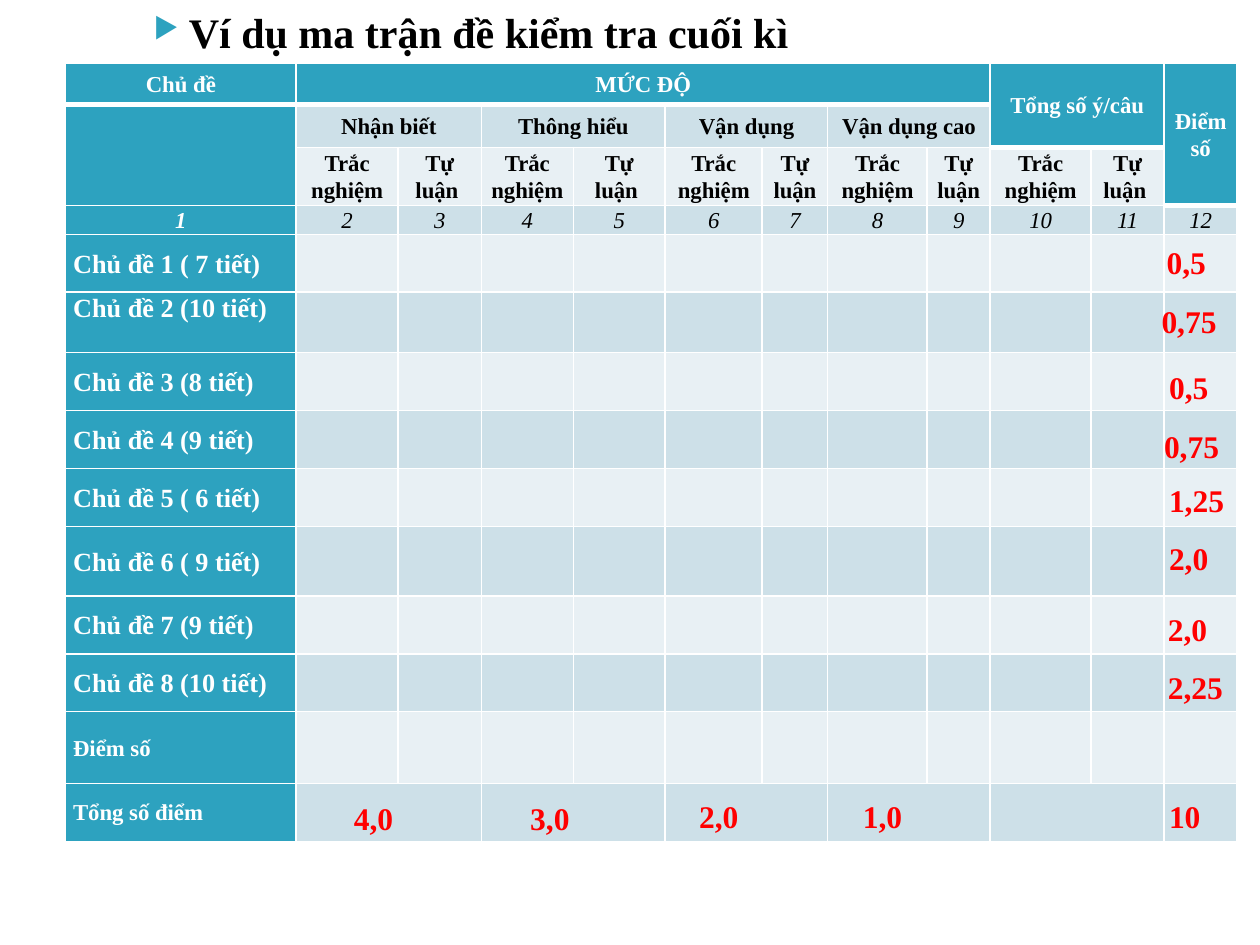
import dataclasses

import pptx
import pptx.dml.color
import pptx.enum.text
import pptx.oxml
import pptx.oxml.ns
import pptx.util
from pptx.util import Inches

COLORS = {"teal": "2DA2BF", "dark_band": "CDE0E8", "light_band": "E8F0F4",
          "white": "FFFFFF", "black": "000000", "red": "FF0000"}
FONT = "Times New Roman"
ALIGN = pptx.enum.text.PP_ALIGN
ANCHOR = pptx.enum.text.MSO_ANCHOR

COLUMN_WIDTHS = [1.83, 0.81, 0.66, 0.73, 0.73, 0.77, 0.52, 0.79, 0.5, 0.8, 0.58, 0.58]
ROW_HEIGHTS = [0.33, 0.34, 0.46, 0.23, 0.46, 0.48, 0.46, 0.46, 0.46, 0.55,
               0.46, 0.46, 0.57, 0.46]
LEVELS = ["Nhận biết", "Thông hiểu", "Vận dụng", "Vận dụng cao"]
TOPICS = ["Chủ đề 1 ( 7 tiết)", "Chủ đề 2 (10 tiết)", "Chủ đề 3 (8 tiết)",
          "Chủ đề 4 (9 tiết)", "Chủ đề 5 ( 6 tiết)", "Chủ đề 6 ( 9 tiết)",
          "Chủ đề 7 (9 tiết)", "Chủ đề 8 (10 tiết)"]
NUMBER_ROW, FIRST_TOPIC_ROW, SCORE_ROW, TOTAL_ROW = 3, 4, 12, 13


@dataclasses.dataclass(frozen=True)
class Style:
    size: int
    color: str
    bold: bool = True
    italic: bool = False


@dataclasses.dataclass(frozen=True)
class Label:
    row: int
    column: int
    text: str
    style: Style
    centred: bool = True
    inset: float = 0.06
    anchor: ANCHOR = ANCHOR.MIDDLE


@dataclasses.dataclass(frozen=True)
class Score:
    text: str
    left: float
    top: float
    width: float


HEADER = Style(13, "white")
SUBHEADER = Style(13, "black")
TOPIC = Style(15, "white")
NUMBER = Style(13, "black", bold=False, italic=True)
FIRST_NUMBER = Style(13, "white", italic=True)
TITLE = Style(24, "black")
SCORE = Style(18, "red")

SCORES = [
    # Totals along the bottom row
    Score("4,0", 2.71, 6.29, 0.9), Score("3,0", 4.11, 6.29, 0.9),
    Score("2,0", 5.45, 6.28, 0.9), Score("1,0", 6.75, 6.28, 0.9),
    Score("10", 9.18, 6.28, 0.9),
    # Points per topic down the last column
    Score("0,5", 9.16, 1.88, 0.61), Score("0,75", 9.12, 2.35, 0.82),
    Score("0,5", 9.18, 2.87, 0.61), Score("0,75", 9.14, 3.34, 0.76),
    Score("1,25", 9.18, 3.77, 0.76), Score("2,0", 9.18, 4.23, 0.76),
    Score("2,0", 9.17, 4.79, 0.76), Score("2,25", 9.17, 5.25, 0.76),
]


def rgb(name: str) -> pptx.dml.color.RGBColor:
    return pptx.dml.color.RGBColor.from_string(COLORS[name])


def add_span(para, text: str, style: Style) -> None:
    span = para.add_run()
    span.text = text
    span.font.name = FONT
    span.font.size = pptx.util.Pt(style.size)
    span.font.bold = style.bold
    span.font.italic = style.italic
    span.font.color.rgb = rgb(style.color)


def add_box(slide, left: float, top: float, width: float, height: float):
    box = slide.shapes.add_textbox(Inches(left), Inches(top), Inches(width), Inches(height))
    box.text_frame.word_wrap = True
    return box


def add_xml(parent, xml: str) -> None:
    namespace = pptx.oxml.ns.nsdecls("a")
    parent.append(pptx.oxml.parse_xml(xml.replace(" ", f" {namespace} ", 1)))


def is_header_end(row: int, column: int) -> bool:
    """Tell whether the heavy rule under the header runs below this cell."""
    return row == 0 or (row == 1 and column in (9, 10)) or (row == 2 and column == 11)


def cell_fill(row: int, column: int) -> str:
    in_header = row == 0 or (row == 1 and column > 8) or (row == 2 and column == 11)
    if column == 0 or in_header:
        return "teal"
    return "dark_band" if row % 2 else "light_band"


def format_cell(cell, row: int, column: int) -> None:
    cell.margin_left = cell.margin_right = Inches(0.06)
    cell.margin_top = cell.margin_bottom = 0
    widths = {"lnL": 1, "lnR": 1,
              "lnT": 3 if row > 0 and is_header_end(row - 1, column) else 1,
              "lnB": 3 if is_header_end(row, column) else 1}
    properties = cell._tc.get_or_add_tcPr()
    for side, width in widths.items():
        add_xml(properties, f'<a:{side} w="{pptx.util.Pt(width)}"><a:solidFill>'
                f'<a:srgbClr val="{COLORS["white"]}"/></a:solidFill></a:{side}>')
    cell.fill.solid()
    cell.fill.fore_color.rgb = rgb(cell_fill(row, column))


def write_label(table, label: Label) -> None:
    cell = table.cell(label.row, label.column)
    cell.vertical_anchor = label.anchor
    cell.margin_left = cell.margin_right = Inches(label.inset)
    para = cell.text_frame.paragraphs[0]
    para.alignment = ALIGN.CENTER if label.centred else ALIGN.LEFT
    para.line_spacing = 1.07
    add_span(para, label.text, label.style)


def table_labels() -> list[Label]:
    labels = [Label(0, 0, "Chủ đề", HEADER), Label(0, 1, "MỨC ĐỘ", HEADER),
              Label(0, 9, "Tổng số ý/câu", HEADER), Label(0, 11, "Điểm số", HEADER),
              Label(SCORE_ROW, 0, "Điểm số", HEADER, centred=False),
              Label(TOTAL_ROW, 0, "Tổng số điểm", HEADER, centred=False)]
    for index, level in enumerate(LEVELS):
        labels.append(Label(1, 1 + 2 * index, level, SUBHEADER))
    for column in range(1, 11):
        kind = "Trắc nghiệm" if column % 2 else "Tự luận "
        labels.append(Label(2, column, kind, SUBHEADER, inset=0.07))
    for column in range(len(COLUMN_WIDTHS)):
        style = NUMBER if column else FIRST_NUMBER
        labels.append(Label(NUMBER_ROW, column, str(column + 1), style))
    for index, topic in enumerate(TOPICS):
        anchor = ANCHOR.TOP if index == 1 else ANCHOR.MIDDLE
        labels.append(Label(FIRST_TOPIC_ROW + index, 0, topic, TOPIC,
                            centred=False, anchor=anchor))
    return labels


def add_matrix(slide) -> None:
    frame = slide.shapes.add_table(
        len(ROW_HEIGHTS), len(COLUMN_WIDTHS), Inches(0.52), Inches(0.5),
        Inches(sum(COLUMN_WIDTHS)), Inches(sum(ROW_HEIGHTS)))
    table = frame.table
    table.first_row = table.horz_banding = False
    for column, width in zip(table.columns, COLUMN_WIDTHS):
        column.width = Inches(width)
    for row, height in zip(table.rows, ROW_HEIGHTS):
        row.height = Inches(height)
    for row in range(len(ROW_HEIGHTS)):
        for column in range(len(COLUMN_WIDTHS)):
            format_cell(table.cell(row, column), row, column)
    # Merged areas: header blocks, then column pairs for levels and totals
    merges = [(0, 1, 0, 8), (0, 9, 1, 10), (0, 11, 2, 11), (1, 0, 2, 0)]
    merges += [(1, left, 1, left + 1) for left in range(1, 9, 2)]
    merges += [(TOTAL_ROW, left, TOTAL_ROW, left + 1) for left in range(1, 11, 2)]
    for top, left, bottom, right in merges:
        table.cell(top, left).merge(table.cell(bottom, right))
    for label in table_labels():
        write_label(table, label)


def add_title(slide) -> None:
    para = add_box(slide, 1, 0, 8.18, 0.5).text_frame.paragraphs[0]
    properties = para._p.get_or_add_pPr()
    properties.set("marL", str(Inches(0.4)))
    properties.set("indent", str(Inches(-0.28)))
    add_xml(properties, f'<a:buClr ><a:srgbClr val="{COLORS["teal"]}"/></a:buClr>')
    add_xml(properties, '<a:buSzPct val="68000"/>')
    add_xml(properties, '<a:buChar char="▶"/>')
    add_span(para, "Ví dụ ma trận đề kiểm tra cuối kì", TITLE)


def main() -> None:
    deck = pptx.Presentation()
    deck.slide_width, deck.slide_height = Inches(10), Inches(7.5)
    page = deck.slides.add_slide(deck.slide_layouts[6])
    add_matrix(page)
    add_title(page)
    for score in SCORES:
        box = add_box(page, score.left, score.top, score.width, 0.4)
        add_span(box.text_frame.paragraphs[0], score.text, SCORE)
    deck.save("out.pptx")


if __name__ == "__main__":
    main()
